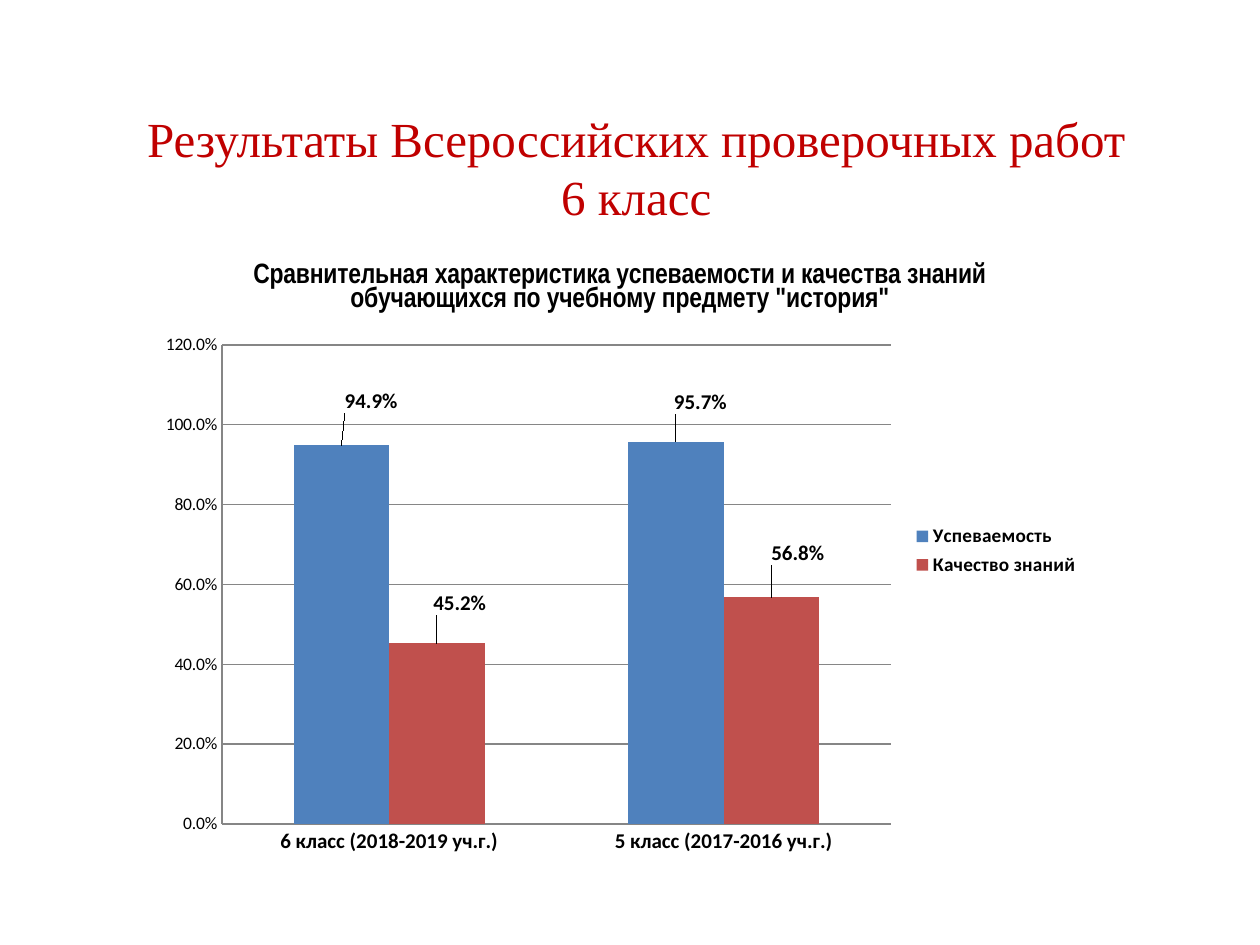
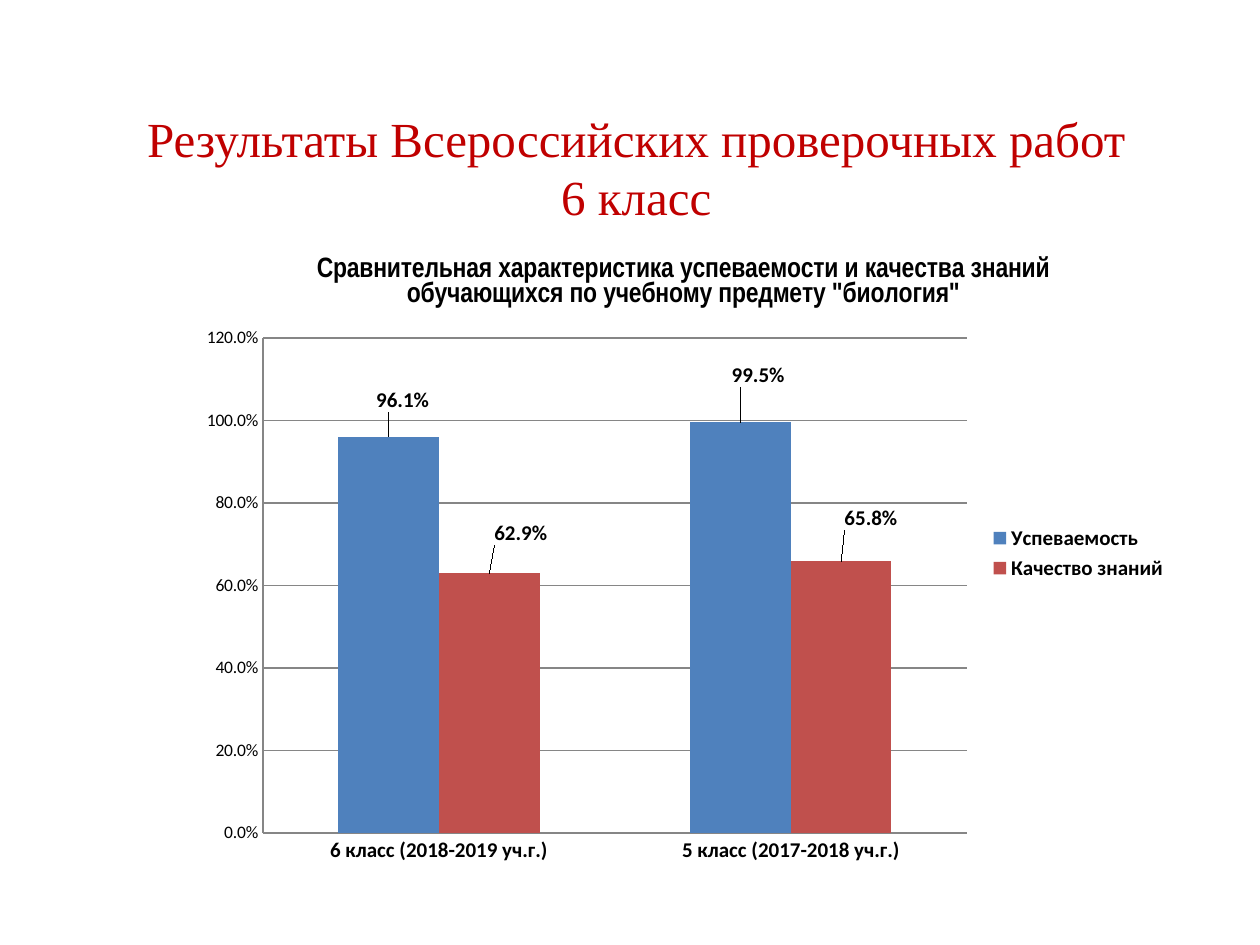
import lxml.etree
import pptx
import pptx.chart.data
import pptx.dml.color
import pptx.enum.chart
import pptx.enum.text
import pptx.oxml.ns
import pptx.util

Pt = pptx.util.Pt
COLOURS = {
    "title": "C00000",
    "text": "000000",
    "grid": "868686",
    "Успеваемость": "4F81BD",
    "Качество знаний": "C0504D",
}
TITLE_LINES = ["Результаты Всероссийских проверочных работ", "6 класс"]
TITLE_BOX = (39.6, 50.4, 648, 90)

# Boxes, plot areas and label shifts are in points; plots are relative to the chart box.
SUBJECTS = [
    {
        "subject": "история",
        "box": (84.24, 134.64, 540, 360),
        "plot": (42.6, 62.5, 382.3, 273.7),
        "legend_size": 11,
        "years": ["6 класс (2018-2019 уч.г.)", "5 класс (2017-2016 уч.г.)"],
        "results": {"Успеваемость": [0.949, 0.957], "Качество знаний": [0.452, 0.568]},
        "shifts": [[(17, -15), (14, -13)], [(13, -13), (15, -15)]],
    },
    {
        "subject": "биология",
        "box": (106.56, 131.04, 568.08, 370.08),
        "plot": (43.7, 62.1, 402.3, 282.9),
        "legend_size": 12,
        "years": ["6 класс (2018-2019 уч.г.)", "5 класс (2017-2018 уч.г.)"],
        "results": {"Успеваемость": [0.961, 0.995], "Качество знаний": [0.629, 0.658]},
        "shifts": [[(8, -11), (10, -17)], [(18, -13), (17, -15)]],
    },
]


def colour(name):
    return pptx.dml.color.RGBColor.from_string(COLOURS[name])


def set_font(font, size, bold=False, name="Calibri", colour_name="text"):
    font.size = Pt(size)
    font.bold = bold
    font.name = name
    font.color.rgb = colour(colour_name)


def manual_layout(**settings):
    """Return a c:layout element holding the given settings in order."""
    tag = pptx.oxml.ns.qn
    layout = lxml.etree.Element(tag("c:layout"))
    manual = lxml.etree.SubElement(layout, tag("c:manualLayout"))
    for key, value in settings.items():
        lxml.etree.SubElement(manual, tag(f"c:{key}")).set("val", str(value))
    return layout


def add_title(page, box):
    frame = page.shapes.add_textbox(*map(Pt, box)).text_frame
    frame.word_wrap = True
    frame.vertical_anchor = pptx.enum.text.MSO_ANCHOR.MIDDLE
    para = frame.paragraphs[0]
    para.alignment = pptx.enum.text.PP_ALIGN.CENTER
    for index, line in enumerate(TITLE_LINES):
        if index:
            para.add_line_break()
        span = para.add_run()
        span.text = line
        set_font(span.font, 28, name="Times New Roman", colour_name="title")


def style_axes(chart):
    values, years = chart.value_axis, chart.category_axis
    values.minimum_scale, values.maximum_scale, values.major_unit = 0, 1.2, 0.2
    values.tick_labels.number_format = "0.0%"
    values.tick_labels.number_format_is_linked = False
    values.has_major_gridlines = True
    for axis, size, bold in ((values, 10, False), (years, 12, True)):
        axis.major_tick_mark = pptx.enum.chart.XL_TICK_MARK.NONE
        set_font(axis.tick_labels.font, size, bold)
    for line in (values.format.line, years.format.line, values.major_gridlines.format.line):
        line.color.rgb = colour("grid")
        line.width = Pt(0.75)


def style_series(chart, shifts, width, height):
    """Colour the bars and move each value label by its shift."""
    for series, series_shifts in zip(chart.plots[0].series, shifts):
        series.format.fill.solid()
        series.format.fill.fore_color.rgb = colour(series.name)
        labels = series.data_labels
        labels.show_value = True
        labels.number_format = "0.0%"
        labels.number_format_is_linked = False
        set_font(labels.font, 12, True)
        for index in range(len(series_shifts)):
            label = series.points[index].data_label
            label.position = pptx.enum.chart.XL_LABEL_POSITION.OUTSIDE_END
            set_font(label.font, 12, True)
    all_shifts = [shift for series_shifts in shifts for shift in series_shifts]
    for label, (right, down) in zip(chart.element.xpath(".//c:dLbl"), all_shifts):
        label.insert(1, manual_layout(x=right / width, y=down / height))


def place_plot(chart, plot, width, height):
    area = chart.element.xpath(".//c:plotArea")[0]
    for layout in area.xpath("./c:layout"):
        area.remove(layout)
    left, top, plot_width, plot_height = plot
    area.insert(0, manual_layout(
        layoutTarget="inner", xMode="edge", yMode="edge",
        x=left / width, y=top / height, w=plot_width / width, h=plot_height / height))


def add_results_chart(page, box, details):
    data = pptx.chart.data.CategoryChartData(number_format="0.0%")
    data.categories = details["years"]
    for name, values in details["results"].items():
        data.add_series(name, values)
    chart = page.shapes.add_chart(
        pptx.enum.chart.XL_CHART_TYPE.COLUMN_CLUSTERED, *map(Pt, box), data).chart
    set_font(chart.font, 10)
    chart.plots[0].gap_width = 150
    chart.plots[0].overlap = 0
    chart.plots[0].vary_by_categories = False

    chart.has_title = True
    span = chart.chart_title.text_frame.paragraphs[0].add_run()
    span.text = ("Сравнительная характеристика успеваемости и качества знаний "
                 f'обучающихся по учебному предмету "{details["subject"]}"')
    set_font(span.font, 16, True, "Arial Narrow")

    chart.has_legend = True
    chart.legend.position = pptx.enum.chart.XL_LEGEND_POSITION.RIGHT
    chart.legend.include_in_layout = False
    set_font(chart.legend.font, details["legend_size"], True)

    style_axes(chart)
    style_series(chart, details["shifts"], *box[2:])
    place_plot(chart, details["plot"], *box[2:])


def main():
    deck = pptx.Presentation()
    deck.slide_width, deck.slide_height = Pt(720), Pt(540)
    for details in SUBJECTS:
        page = deck.slides.add_slide(deck.slide_layouts[6])
        add_title(page, TITLE_BOX)
        add_results_chart(page, details["box"], details)
    deck.save("out.pptx")


if __name__ == "__main__":
    main()
